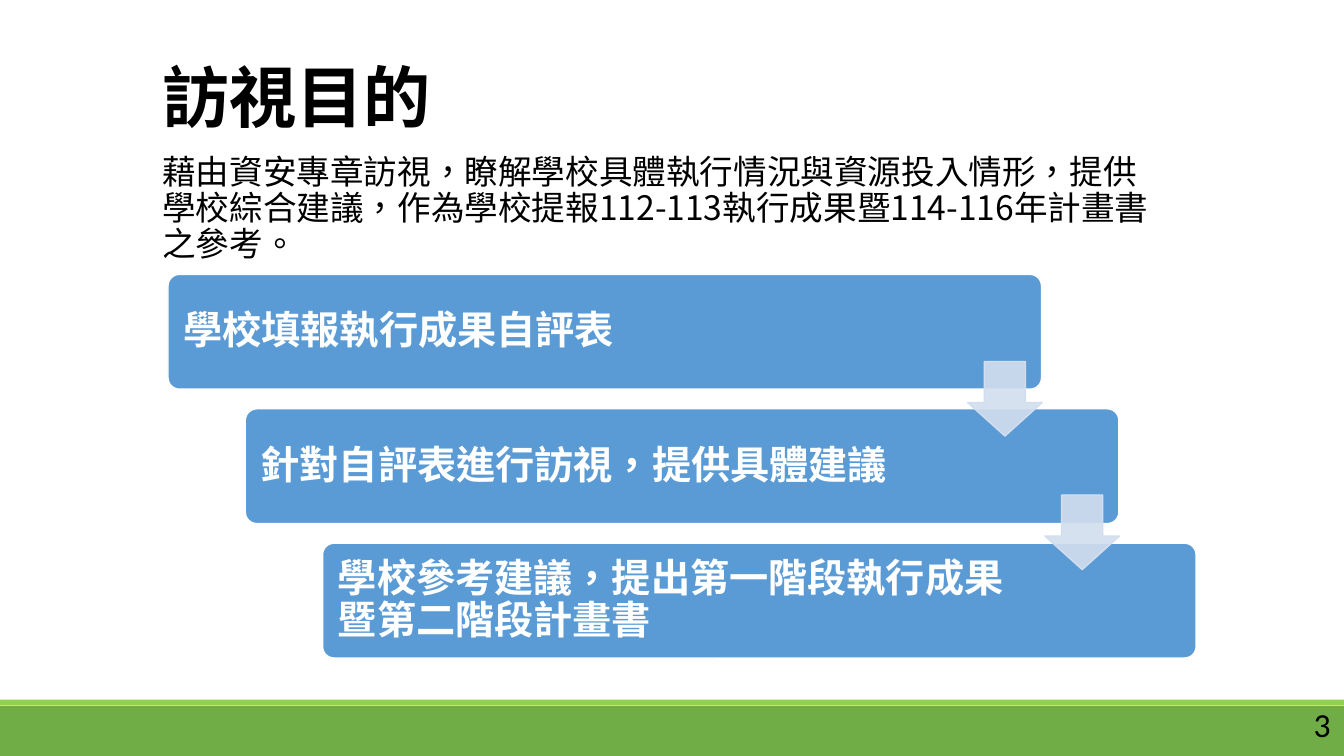
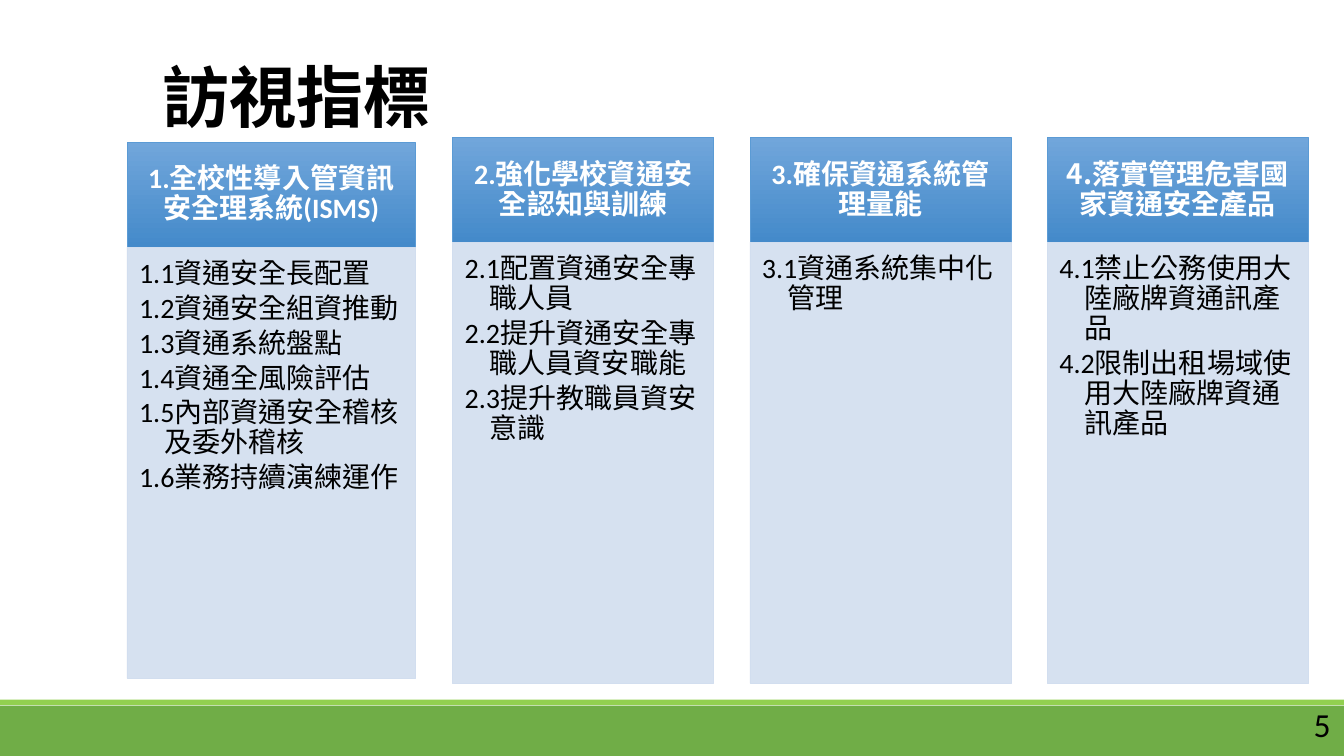
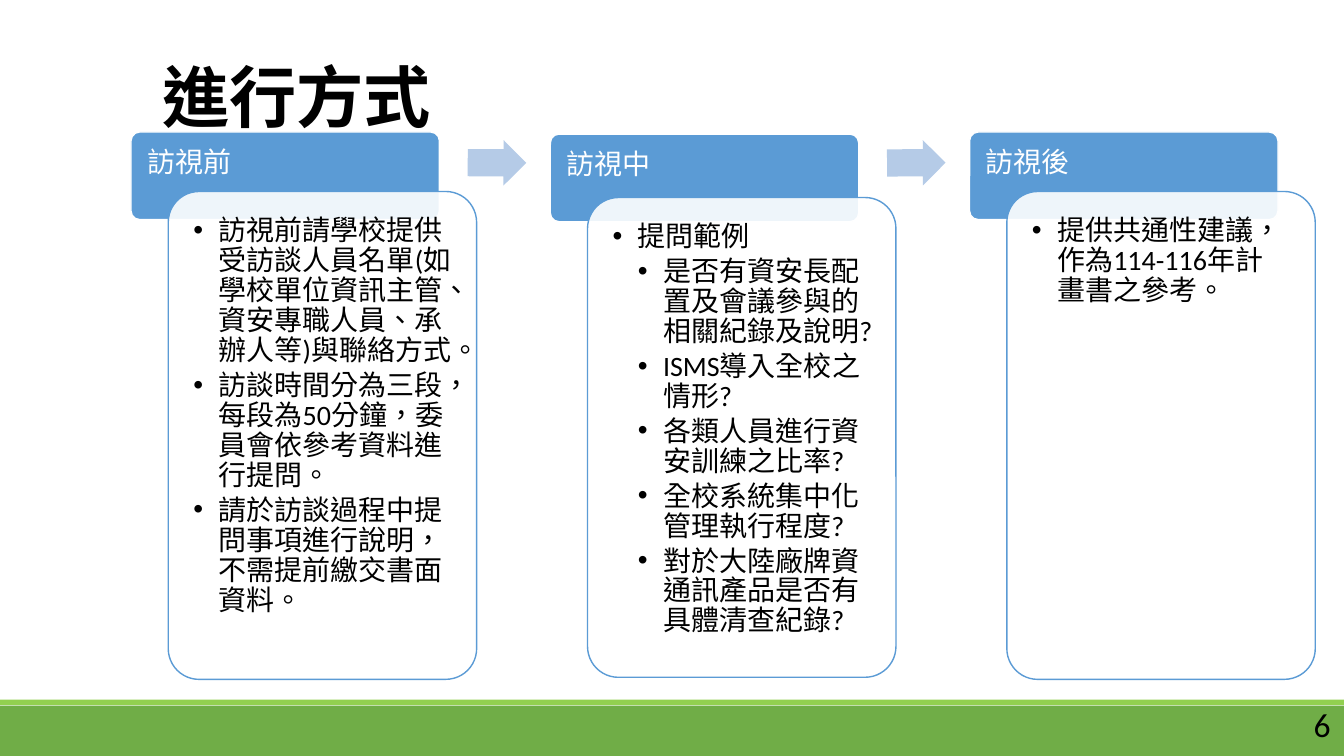
from lxml import etree
from pptx import Presentation
from pptx.dml.color import RGBColor
from pptx.enum.shapes import MSO_SHAPE
from pptx.enum.text import MSO_ANCHOR, MSO_AUTO_SIZE, PP_ALIGN
from pptx.oxml.ns import qn
from pptx.util import Pt

RECT, ROUND = MSO_SHAPE.RECTANGLE, MSO_SHAPE.ROUNDED_RECTANGLE
DOWN, RIGHT = MSO_SHAPE.DOWN_ARROW, MSO_SHAPE.RIGHT_ARROW
TOP, MID = MSO_ANCHOR.TOP, MSO_ANCHOR.MIDDLE
LEFT, CENTER, END = PP_ALIGN.LEFT, PP_ALIGN.CENTER, PP_ALIGN.RIGHT
FIXED = MSO_AUTO_SIZE.NONE

WHITE = RGBColor(0xFF, 0xFF, 0xFF)
BLACK = RGBColor(0, 0, 0)
LIME = RGBColor(0x92, 0xD0, 0x50)
GREEN = RGBColor(0x70, 0xAD, 0x47)
BLUE = RGBColor(0x5B, 0x9B, 0xD5)
LIGHT = RGBColor(0x71, 0xA6, 0xDB)
DEEP = RGBColor(0x44, 0x8A, 0xCA)
PALE = RGBColor(0xD2, 0xDE, 0xEF)
MIST = RGBColor(0xB5, 0xCB, 0xE7)

LATIN, HAN = "Calibri", "Noto Sans CJK SC"
WIDTH, HEIGHT = 960, 540
TITLE_BOX = (108.7, 32.4, 578, 65.5)
INSET = (7.2, 3.6, 7.2, 3.6)
STEP = 18  # indent of one list level

# Content: a list item is (level, text)
GOAL = "藉由資安專章訪視，瞭解學校具體執行情況與資源投入情形，提供學校綜合建議，作為學校提報112-113執行成果暨114-116年計畫書之參考。"
STAGES = [
    "學校填報執行成果自評表",
    "針對自評表進行訪視，提供具體建議",
    "學校參考建議，提出第一階段執行成果暨第二階段計畫書",
]
GROUPS = [
    ("1.全校性導入管資訊安全理系統(ISMS)", LATIN, [
        "1.1資通安全長配置", "1.2資通安全組資推動", "1.3資通系統盤點",
        "1.4資通全風險評估", "1.5內部資通安全稽核及委外稽核",
        "1.6業務持續演練運作"]),
    ("2.強化學校資通安全認知與訓練", LATIN, [
        "2.1配置資通安全專職人員", "2.2提升資通安全專職人員資安職能",
        "2.3提升教職員資安意識"]),
    ("3.確保資通系統管理量能", LATIN, ["3.1資通系統集中化管理"]),
    ("4.落實管理危害國家資通安全產品", HAN, [
        "4.1禁止公務使用大陸廠牌資通訊產品",
        "4.2限制出租場域使用大陸廠牌資通訊產品"]),
]
PHASES = [
    ("訪視前", [
        (1, "訪視前請學校提供受訪談人員名單(如學校單位資訊主管、資安專職人員、承辦人等)與聯絡方式。"),
        (1, "訪談時間分為三段，每段為50分鐘，委員會依參考資料進行提問。"),
        (1, "請於訪談過程中提問事項進行說明，不需提前繳交書面資料。")]),
    ("訪視中", [
        (1, "提問範例"),
        (2, "是否有資安長配置及會議參與的相關紀錄及說明?"),
        (2, "ISMS導入全校之情形?"),
        (2, "各類人員進行資安訓練之比率?"),
        (2, "全校系統集中化管理執行程度?"),
        (2, "對於大陸廠牌資通訊產品是否有具體清查紀錄?")]),
    ("訪視後", [(1, "提供共通性建議，作為114-116年計畫書之參考。")]),
]


def place(shape, box):
    shape.left, shape.top, shape.width, shape.height = map(Pt, box)


def write(shape, items, size=20, color=BLACK, font=LATIN, bold=False,
          align=LEFT, anchor=TOP, inset=INSET, lead=1.07, after=0, bullet=None):
    """Fill a shape with one text, or with a list of (level, text)."""
    frame = shape.text_frame
    frame.word_wrap, frame.auto_size = True, FIXED
    frame.vertical_anchor = anchor
    (frame.margin_left, frame.margin_top,
     frame.margin_right, frame.margin_bottom) = map(Pt, inset)
    if isinstance(items, str):
        items = [(0, items)]
    for i, (level, text) in enumerate(items):
        para = frame.paragraphs[0] if i == 0 else frame.add_paragraph()
        props = para._p.get_or_add_pPr()
        props.set("marL", str(Pt(STEP * level)))
        props.set("indent", str(-Pt(STEP) if level else 0))
        if bullet:
            etree.SubElement(props, qn("a:buFont")).set("typeface", "Arial")
            etree.SubElement(props, qn("a:buChar")).set("char", bullet)
        else:
            etree.SubElement(props, qn("a:buNone"))
        para.level, para.alignment = level, align
        para.line_spacing = Pt(round(size * lead, 1))
        para.space_before, para.space_after = Pt(0), Pt(after)
        run = para.add_run()
        run.text = text
        run.font.size, run.font.bold, run.font.name = Pt(size), bold, font
        run.font.color.rgb = color
        mark = run._r.get_or_add_rPr()
        mark.set("lang", "zh-TW")
        etree.SubElement(mark, qn("a:ea")).set("typeface", HAN)


def draw(slide, kind, box, fill, line=None, weight=1, adjust=(), alpha=None):
    """Add a preset shape; a list of two colours makes a gradient downwards."""
    shape = slide.shapes.add_shape(kind, *map(Pt, box))
    shape.shadow.inherit = False
    for i, value in enumerate(adjust):
        shape.adjustments[i] = value
    if isinstance(fill, list):
        shape.fill.gradient()
        shape.fill.gradient_angle = 270
        for stop, shade in zip(shape.fill.gradient_stops, fill):
            stop.color.rgb = shade
    else:
        shape.fill.solid()
        shape.fill.fore_color.rgb = fill
    if alpha:
        tint = shape.element.spPr.find(qn("a:solidFill"))[0]
        etree.SubElement(tint, qn("a:alpha")).set("val", str(alpha * 1000))
    if line is None:
        shape.line.fill.background()
    else:
        shape.line.color.rgb, shape.line.width = line, Pt(weight)
    return shape


def set_master(deck, slide):
    """Put the title place and the foot bands on the slide master."""
    master = deck.slide_master
    place(master.placeholders[0], TITLE_BOX)
    tree = master.element.cSld.spTree
    bands = [(LIME, 499.7, 4), (GREEN, 504, 36)]
    for i, (color, top, height) in enumerate(bands):
        band = draw(slide, RECT, (0, top, WIDTH, height), color).element
        band.nvSpPr.cNvPr.set("id", str(101 + i))
        tree.insert(2 + i, band)


def add_page(deck, layout, title, number):
    slide = deck.slides.add_slide(deck.slide_layouts[layout])
    write(slide.shapes.title, title, size=48, font=HAN, bold=True, lead=1.28)
    box = slide.shapes.add_textbox(*map(Pt, (741.6, 504, 216, 28.8)))
    write(box, str(number), size=24, align=END, anchor=MID)
    return slide


def fill_goal(slide):
    body = slide.placeholders[1]
    place(body, (108.7, 107.3, 734.4, 325.4))
    write(body, GOAL, size=24, font=HAN)
    for i, stage in enumerate(STAGES):
        bar = draw(slide, ROUND, (120 + 55.2 * i, 196 + 96 * i, 624, 82),
                   BLUE, WHITE, adjust=[0.1])
        write(bar, stage, size=28, color=WHITE, font=HAN, bold=True,
              anchor=MID, inset=(8.6, 8.6, 117, 8.6))
    for i in range(len(STAGES) - 1):
        draw(slide, DOWN, (691.2 + 55.2 * i, 258.2 + 95.4 * i, 53.3, 53.3),
             PALE, PALE, adjust=[0.55, 0.45], alpha=90)


def fill_groups(slide):
    for i, (head, font, items) in enumerate(GROUPS):
        if i == 0:
            left, top, width, foot = 90.7, 101.5, 206, 484.5
        else:
            left, top, width, foot = 323.3 + 212.4 * (i - 1), 98, 186.5, 488.2
        cap = draw(slide, RECT, (left, top, width, 75), [LIGHT, DEEP],
                   BLUE, 0.5)
        write(cap, head, color=WHITE, font=font, bold=True, align=CENTER,
              anchor=MID, inset=(11.5, 6.5, 11.5, 6.5))
        panel = draw(slide, RECT, (left, top + 75, width, foot - top - 75),
                     PALE, PALE, 0.5, alpha=90)
        write(panel, [(1, item) for item in items], after=3.5,
              inset=(8.6, 8.6, 11.5, 12.2))


def fill_phases(slide):
    pitch = 299.5
    for i, (head, items) in enumerate(PHASES):
        left = 93.6 + pitch * i
        top, start, height = (95.8, 141.1, 342.7) if i == 1 else (94.3, 136.8, 348.5)
        tab = draw(slide, ROUND, (left, top, 220.3, 62.6), BLUE, WHITE,
                   adjust=[0.1])
        write(tab, head, color=WHITE, inset=(9.7, 9.7, 9.7, 5.8))
        panel = draw(slide, ROUND, (left + 26.6, start, 220.3, height),
                     WHITE, BLUE, adjust=[0.1], alpha=90)
        write(panel, items, after=3.5, bullet="•", inset=[11.5] * 4)
    for i, turn in enumerate((0.3, -0.3)):
        arrow = draw(slide, RIGHT, (334.1 + pitch * i, 100.1, 41.8, 32.4),
                     MIST, adjust=[0.6, 0.5])
        arrow.rotation = turn


PAGES = [
    (1, "訪視目的", 3, fill_goal),
    (5, "訪視指標", 5, fill_groups),
    (5, "進行方式", 6, fill_phases),
]


def main():
    deck = Presentation()
    deck.slide_width, deck.slide_height = Pt(WIDTH), Pt(HEIGHT)
    for i, (layout, title, number, fill) in enumerate(PAGES):
        slide = add_page(deck, layout, title, number)
        if i == 0:
            set_master(deck, slide)
        fill(slide)
    deck.save("out.pptx")


if __name__ == "__main__":
    main()
